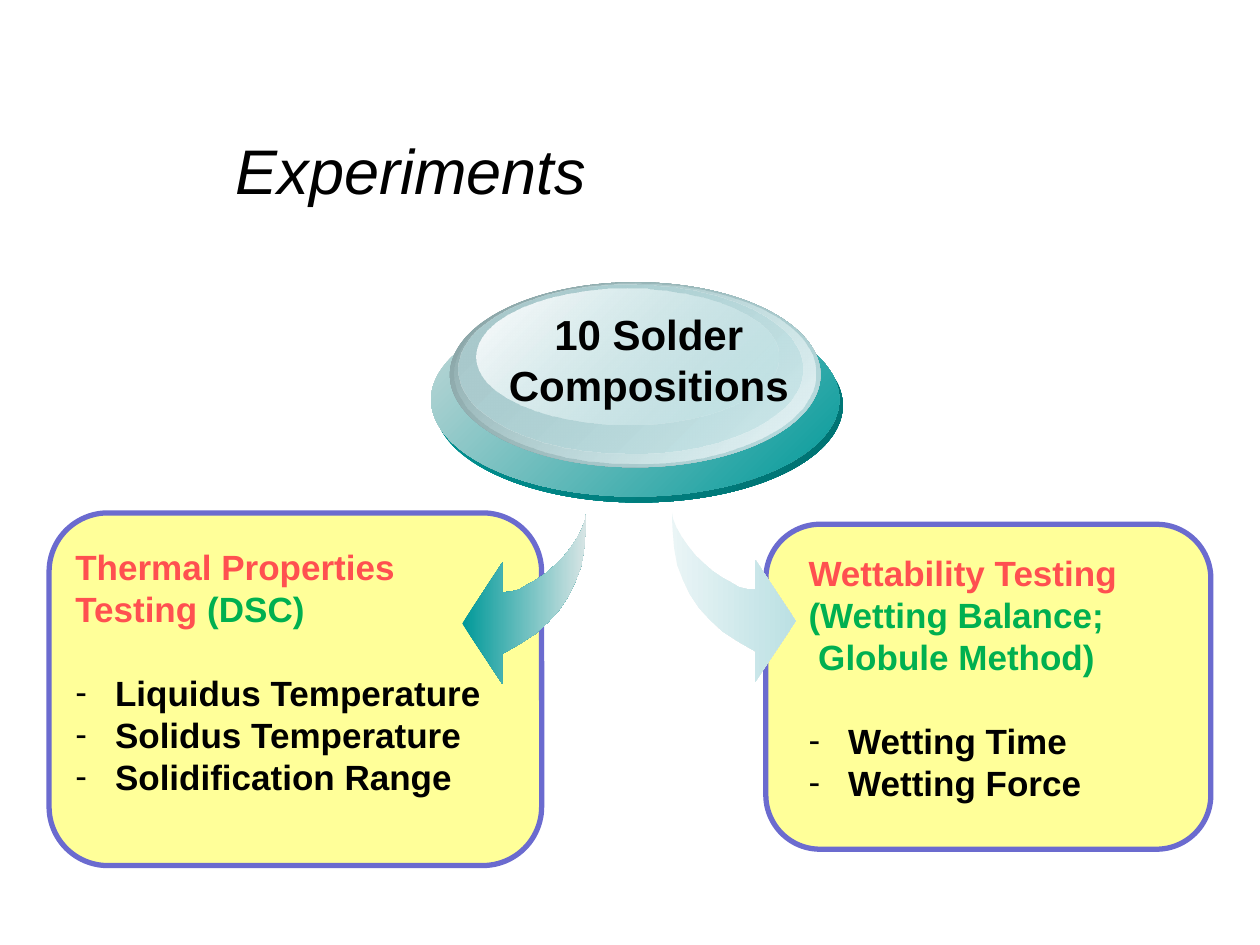
from lxml import etree
from pptx import Presentation
from pptx import util as u
from pptx.dml.color import RGBColor
from pptx.enum import shapes, text
from pptx.oxml.ns import qn

FONT = "Arial"
BLACK = RGBColor(0x00, 0x00, 0x00)
WHITE = RGBColor(0xFF, 0xFF, 0xFF)
YELLOW = RGBColor(0xFF, 0xFF, 0x99)
VIOLET = RGBColor(0x6B, 0x6B, 0xCF)
RED = RGBColor(0xFF, 0x50, 0x50)
GREEN = RGBColor(0x00, 0xB0, 0x50)
TEAL = RGBColor(0x00, 0x99, 0x99)
DARK_TEAL = RGBColor(0x00, 0x70, 0x70)
PALE_TEAL = RGBColor(0xC6, 0xDA, 0xDA)
MIST = RGBColor(0xD8, 0xE5, 0xE5)
AQUA = RGBColor(0xBB, 0xE0, 0xE3)
LIGHT_AQUA = RGBColor(0xEA, 0xF5, 0xF6)
GREY_AQUA = RGBColor(0x86, 0xA0, 0xA2)
MID_AQUA = RGBColor(0xA9, 0xCA, 0xCD)

# Curved arrow in cm: distance from the tail's outer edge, distance down
ARROW = [
    (0, 0), (0.02, 0.4), (0.05, 0.76), (0.11, 1.09), (0.23, 1.4), (0.37, 1.69),
    (0.55, 1.96), (0.77, 2.2), (1.03, 2.44), (1.34, 2.64), (1.69, 2.84),
    (1.69, 3.45), (2.5, 2.23), (1.69, 1), (1.69, 1.6), (1.53, 1.59), (1.36, 1.55),
    (1.19, 1.45), (1.01, 1.35), (0.82, 1.22), (0.65, 1.07), (0.48, 0.91),
    (0.33, 0.72), (0.2, 0.53), (0.1, 0.35), (0.03, 0.17),
]


class SlideBuilder:
    """Holds the style and the current slide."""

    def __init__(self, presentation):
        self.slide = presentation.slides.add_slide(presentation.slide_layouts[5])

    def title(self, box, wording):
        title = self.slide.shapes.title
        title.left, title.top, title.width, title.height = map(u.Cm, box)
        title.text_frame.vertical_anchor = text.MSO_ANCHOR.MIDDLE
        paragraph = title.text_frame.paragraphs[0]
        paragraph.text = wording
        paragraph.alignment = text.PP_ALIGN.LEFT
        self.style(paragraph.font, 36, bold=False)
        paragraph.font.italic = True

    def style(self, font, size, color=BLACK, bold=True):
        font.name, font.size, font.bold = FONT, u.Pt(size), bold
        font.color.rgb = color

    def gradient(self, shape, stops, angle):
        """Each stop is (colour, opacity in percent); the angle is clockwise."""
        shape.shadow.inherit = False
        shape.line.fill.background()
        shape.fill.gradient()
        shape.fill.gradient_angle = (360 - angle) % 360
        for stop, (color, _) in zip(shape.fill.gradient_stops, stops):
            stop.color.rgb = color
        nodes = shape.fill._xPr.iter(qn("a:srgbClr"))
        for node, (_, opacity) in zip(list(nodes), stops):
            if opacity < 100:
                etree.SubElement(node, qn("a:alpha")).set("val", str(opacity * 1000))

    def ellipse(self, box, start, end):
        shape = self.slide.shapes.add_shape(shapes.MSO_SHAPE.OVAL, *map(u.Cm, box))
        self.gradient(shape, (start, end), 45)

    def arrow(self, x, y, direction, start, end):
        points = [(u.Cm(x + direction * dx), u.Cm(y + dy)) for dx, dy in ARROW]
        builder = self.slide.shapes.build_freeform(*points[0])
        builder.add_line_segments(points[1:], close=True)
        self.gradient(builder.convert_to_shape(), ((start, 100), (end, 100)), 0)

    def yellow_box(self, kind, box):
        shape = self.slide.shapes.add_shape(kind, *map(u.Cm, box))
        shape.shadow.inherit = False
        shape.fill.solid()
        shape.fill.fore_color.rgb = YELLOW
        shape.line.fill.background()
        return shape

    def panel(self, frame_box, text_box, headings, items):
        """A framed card; each heading is a list of (wording, colour) runs."""
        frame = self.yellow_box(shapes.MSO_SHAPE.ROUNDED_RECTANGLE, frame_box)
        frame.line.color.rgb = VIOLET
        frame.line.width = u.Pt(3)
        body = self.yellow_box(shapes.MSO_SHAPE.RECTANGLE, text_box).text_frame
        body.word_wrap = True
        body.vertical_anchor = text.MSO_ANCHOR.TOP
        for index, runs in enumerate(headings):
            paragraph = body.add_paragraph() if index else body.paragraphs[0]
            paragraph.alignment = text.PP_ALIGN.LEFT
            for wording, color in runs:
                for part, line in enumerate(wording.split("\n")):
                    if part:
                        paragraph.add_line_break()
                    run = paragraph.add_run()
                    run.text = line
                    self.style(run.font, 20, color)
        for index, item in enumerate(items):
            paragraph = body.add_paragraph()
            paragraph.text = item
            paragraph.alignment = text.PP_ALIGN.LEFT
            if index == 0:
                paragraph.space_before = u.Pt(24)
            self.bullet(paragraph)
            self.style(paragraph.font, 20)

    def bullet(self, paragraph):
        properties = paragraph._p.get_or_add_pPr()
        properties.set("marL", str(u.Cm(0.8)))
        properties.set("indent", str(-u.Cm(0.8)))
        etree.SubElement(properties, qn("a:buFont")).set("typeface", FONT)
        etree.SubElement(properties, qn("a:buChar")).set("char", "-")

    def label(self, box, lines):
        frame = self.slide.shapes.add_textbox(*map(u.Cm, box)).text_frame
        frame.word_wrap = False
        for index, line in enumerate(lines):
            paragraph = frame.add_paragraph() if index else frame.paragraphs[0]
            paragraph.text = line
            paragraph.alignment = text.PP_ALIGN.CENTER
            self.style(paragraph.font, 24)


def main():
    presentation = Presentation()
    presentation.slide_width, presentation.slide_height = u.Cm(25.4), u.Cm(19.05)
    builder = SlideBuilder(presentation)
    builder.title((4.5, 2.31, 18.67, 2.21), "Experiments")

    # Thermal testing
    builder.panel(
        (0.99, 10.34, 9.93, 7.11), (1.27, 10.87, 9.09, 6.02),
        [[("Thermal Properties Testing ", RED), ("(DSC)", GREEN)]],
        ["Liquidus Temperature", "Solidus Temperature", "Solidification Range"])
    builder.arrow(11.82, 10.34, -1, TEAL, MIST)

    # Layered button, from the base up
    for box, start, end in [
        ((8.76, 6.22, 8.23, 3.91), (TEAL, 100), (DARK_TEAL, 100)),
        ((8.69, 6.1, 8.23, 3.91), (PALE_TEAL, 100), (TEAL, 100)),
        ((9.07, 5.69, 7.47, 3.73), (GREY_AQUA, 100), (AQUA, 100)),
        ((9.17, 5.72, 7.26, 3.63), (AQUA, 0), (LIGHT_AQUA, 100)),
        ((9.25, 5.74, 6.93, 3.4), (MID_AQUA, 100), (AQUA, 48)),
        ((9.6, 5.82, 6.1, 2.74), (WHITE, 100), (AQUA, 38)),
    ]:
        builder.ellipse(box, start, end)
    builder.label((9.98, 6.1, 6.2, 2.31), ["10 Solder", "Compositions"])

    # Wettability testing
    builder.panel(
        (15.44, 10.57, 8.97, 6.55), (16.05, 11, 7.98, 5.56),
        [[("Wettability Testing", RED)],
         [("(Wetting Balance;\n Globule Method)", GREEN)]],
        ["Wetting Time", "Wetting Force"])
    builder.arrow(13.54, 10.29, 1, LIGHT_AQUA, AQUA)

    presentation.save("out.pptx")


if __name__ == "__main__":
    main()
